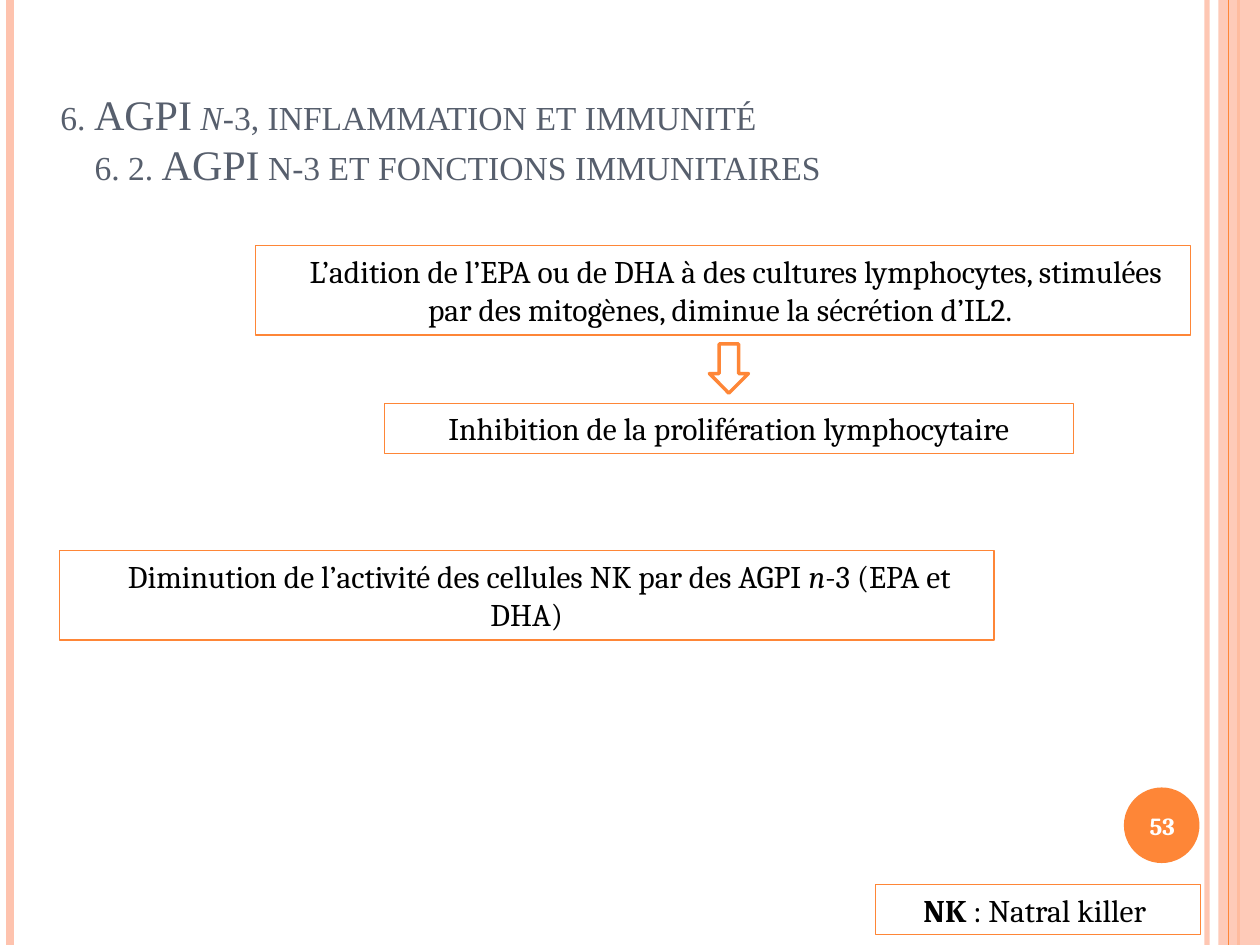
from lxml import etree
from pptx import Presentation
from pptx.dml.color import RGBColor
from pptx.enum.shapes import MSO_CONNECTOR, MSO_SHAPE
from pptx.enum.text import MSO_ANCHOR as Anchor, PP_ALIGN as Align
from pptx.oxml.ns import qn
from pptx.util import Inches, Pt

ORANGE = RGBColor(0xFE, 0x86, 0x37)
PEACH = RGBColor(0xFE, 0xC3, 0xAE)
SLATE = RGBColor(0x57, 0x5F, 0x6D)
BLACK = RGBColor(0, 0, 0)
WHITE = RGBColor(255, 255, 255)
BODY_FONT = "Cambria"
TITLE_FONT = "Times New Roman"


def set_opacity(element, percent):
    """Give the first solid colour inside the element an opacity."""
    colour = next(element.iter(qn("a:srgbClr")))
    etree.SubElement(colour, qn("a:alpha")).set("val", str(percent * 1000))


def add_text(paragraph, text, font=BODY_FONT, size=18, color=BLACK,
             bold=False, italic=False, small_caps=False):
    run = paragraph.add_run()
    run.text = text
    run.font.name = font
    run.font.size = Pt(size)
    run.font.color.rgb = color
    run.font.bold = bold
    run.font.italic = italic
    if small_caps:
        run.font._element.set("cap", "small")


class SlideBuilder:
    def __init__(self, slide):
        self.shapes = slide.shapes

    def vertical_line(self, x, color, width, opacity=100):
        line = self.shapes.add_connector(
            MSO_CONNECTOR.STRAIGHT, Inches(x), 0, Inches(x), Inches(7.5))
        line.line.color.rgb = color
        line.line.width = Pt(width)
        properties = line._element.spPr
        etree.SubElement(properties, qn("a:effectLst"))
        if opacity < 100:
            set_opacity(properties, opacity)

    def shape(self, kind, box, fill=None, line=None, width=0.75, opacity=100):
        shape = self.shapes.add_shape(kind, *map(Inches, box))
        shape.shadow.inherit = False
        if fill is None:
            shape.fill.background()
        else:
            shape.fill.solid()
            shape.fill.fore_color.rgb = fill
        if line is None:
            shape.line.fill.background()
        else:
            shape.line.color.rgb = line
            shape.line.width = Pt(width)
        if opacity < 100:
            set_opacity(shape._element.spPr, opacity)
        return shape

    def statement(self, box, parts, indent=0.0):
        """Outlined box with centred text; parts are (text, format) pairs."""
        frame = self.shape(MSO_SHAPE.RECTANGLE, box, line=ORANGE).text_frame
        frame.word_wrap = True
        frame.vertical_anchor = Anchor.TOP
        paragraph = frame.paragraphs[0]
        paragraph.alignment = Align.CENTER
        if indent:
            paragraph._p.get_or_add_pPr().set("indent", str(Inches(indent)))
        for text, style in parts:
            add_text(paragraph, text, **style)

    def text_frame(self, box, anchor):
        frame = self.shapes.add_textbox(*map(Inches, box)).text_frame
        frame.word_wrap = True
        frame.vertical_anchor = anchor
        return frame

    def title(self, box, lines):
        """Small-caps heading; each line is (left margin, parts)."""
        frame = self.text_frame(box, Anchor.BOTTOM)
        frame.margin_left = Inches(0.17)
        frame.margin_bottom = Inches(0.38)
        for number, (margin, parts) in enumerate(lines):
            paragraph = frame.add_paragraph() if number else frame.paragraphs[0]
            paragraph._p.get_or_add_pPr().set("marL", str(Inches(margin)))
            for text, italic in parts:
                add_text(paragraph, text, font=TITLE_FONT, size=24,
                         color=SLATE, italic=italic, small_caps=True)

    def page_number(self, box, number):
        paragraph = self.text_frame(box, Anchor.MIDDLE).paragraphs[0]
        paragraph.alignment = Align.CENTER
        add_text(paragraph, number, size=14, color=WHITE, bold=True)


def main():
    deck = Presentation()
    deck.slide_width, deck.slide_height = Inches(10), Inches(7.5)
    page = SlideBuilder(deck.slides.add_slide(deck.slide_layouts[6]))

    page.vertical_line(9.58, PEACH, 3, opacity=93)
    page.vertical_line(0.08, PEACH, 4.5)
    page.vertical_line(9.83, ORANGE, 1.5)
    page.shape(MSO_SHAPE.RECTANGLE, (9.67, 0, 0.33, 7.5), PEACH, opacity=87)
    page.vertical_line(9.75, ORANGE, 0.75)
    page.shape(MSO_SHAPE.OVAL, (8.92, 6.25, 0.6, 0.6), ORANGE)
    page.page_number((8.89, 6.27, 0.67, 0.57), "53")

    page.title((0.31, 0.16, 9.38, 1.72), [
        (0, [("6. AGPI ", False), ("n", True),
             ("-3, inflammation et immunité", False)]),
        (0.27, [("6. 2. AGPI n-3 et fonctions immunitaires", False)]),
    ])
    page.statement((2.03, 1.95, 7.42, 0.71), [
        ("L’adition de l’EPA ou de DHA à des cultures lymphocytes, stimulées "
         "par des mitogènes, diminue la sécrétion d’IL2. ", {}),
    ], indent=0.2)
    page.shape(MSO_SHAPE.DOWN_ARROW, (5.63, 2.73, 0.31, 0.39),
               WHITE, ORANGE, width=2)
    page.statement((3.05, 3.2, 5.47, 0.4), [
        ("Inhibition de la prolifération lymphocytaire", {}),
    ])
    page.statement((0.47, 4.37, 7.42, 0.71), [
        ("Diminution de l’activité des cellules NK par des AGPI ", {}),
        ("n", {"italic": True}),
        ("-3 (EPA et DHA)", {}),
    ], indent=0.2)
    page.statement((6.95, 7.02, 2.58, 0.4), [
        ("NK", {"bold": True}),
        (" : Natral killer ", {}),
    ])
    deck.save("out.pptx")


if __name__ == "__main__":
    main()
